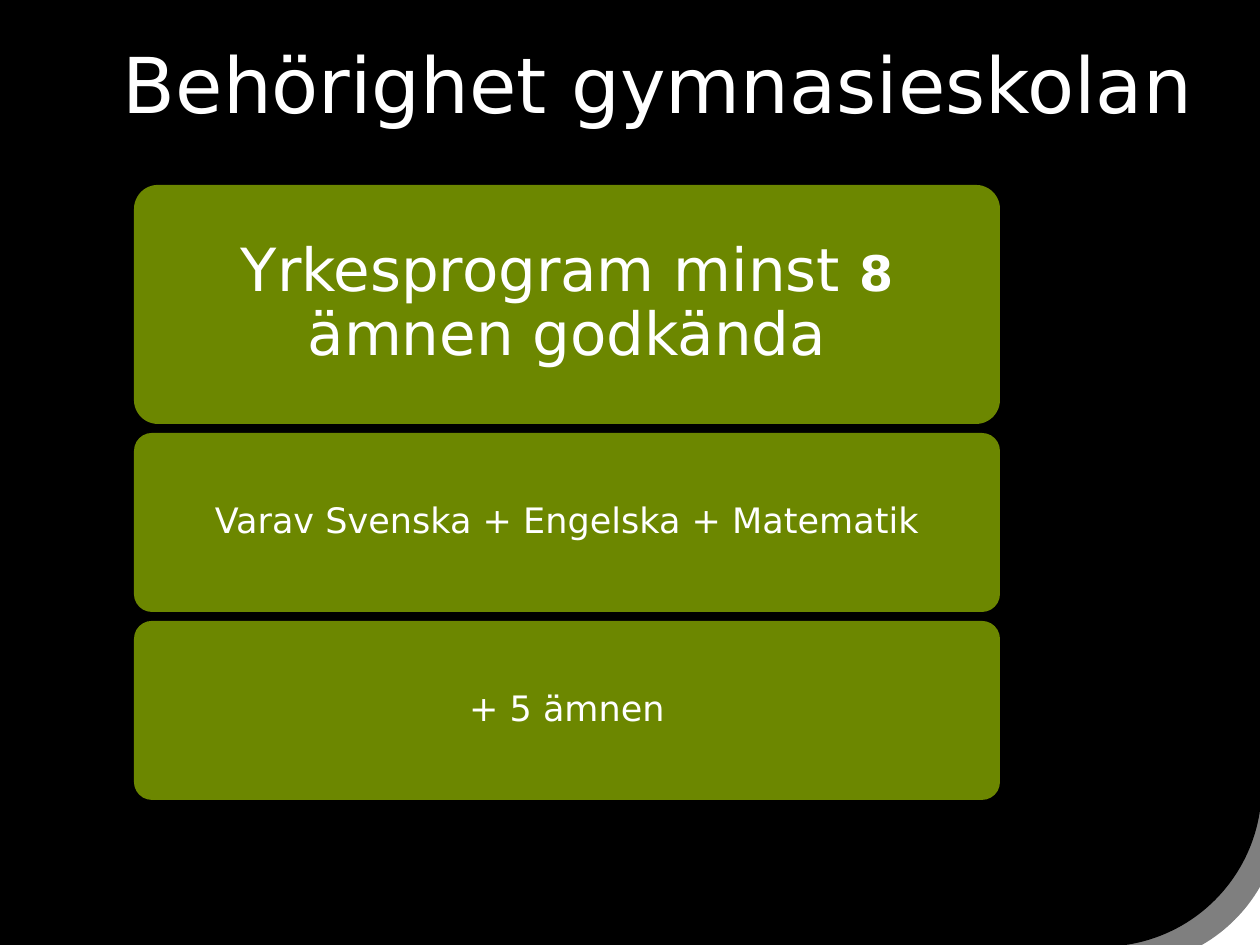
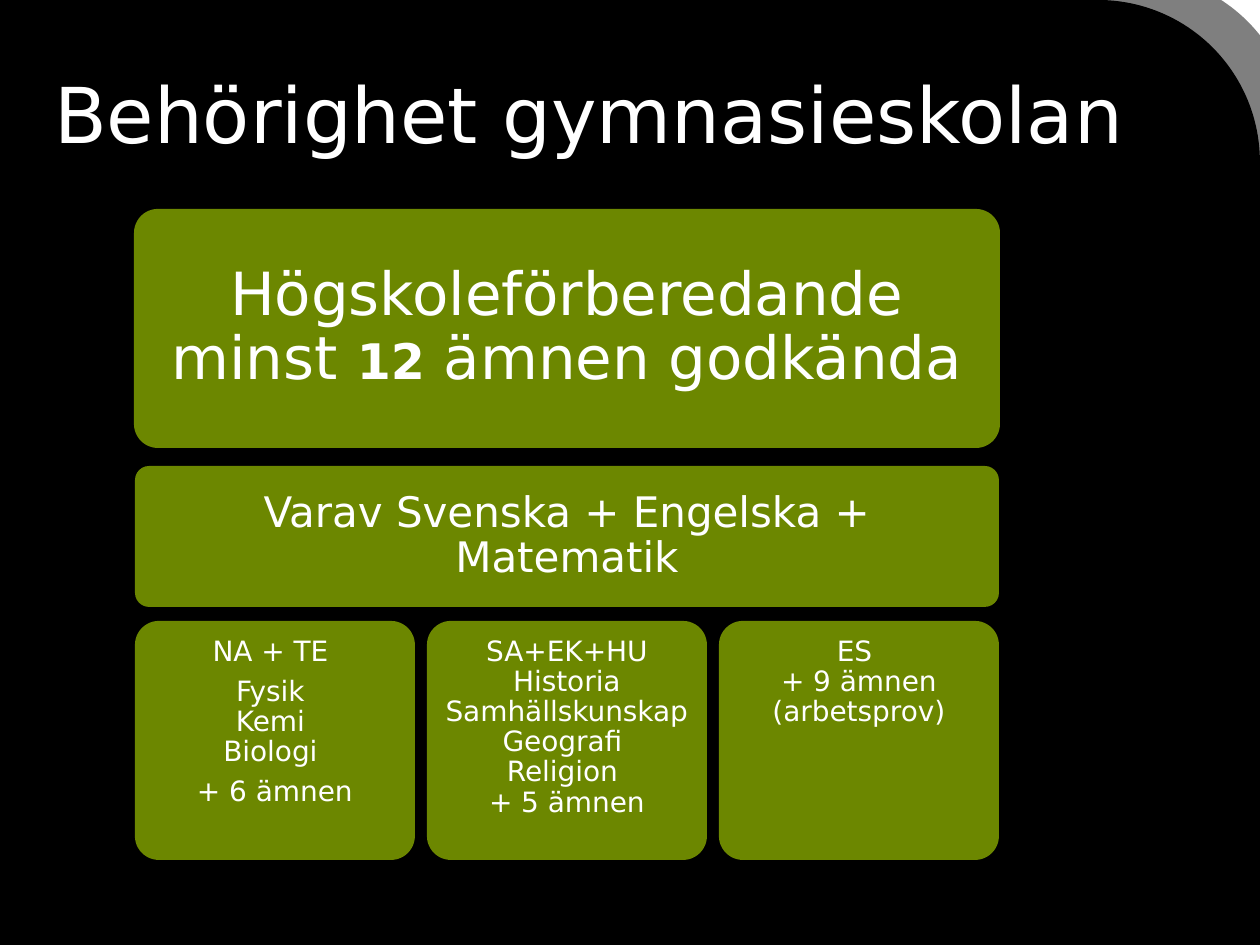
from lxml.etree import SubElement
from pptx import Presentation
from pptx.dml.color import RGBColor
from pptx.enum.shapes import MSO_SHAPE
from pptx.enum.text import MSO_ANCHOR, PP_ALIGN
from pptx.oxml.ns import qn
from pptx.util import Pt

SCALE = 914400 // 126
COLORS = {"page": "FFFFFF", "panel": "000000", "card": "B9E600", "text": "FFFFFF"}
FONT = "DejaVu Sans"
TITLE = "Behörighet gymnasieskolan"
SUBJECTS = "Varav Svenska + Engelska + Matematik"
CARD_LEFT, CARD_WIDTH, HEADING_HEIGHT = 134, 866, 239


def px(*lengths):
    """Turn whole pixels into EMU."""
    return [length * SCALE for length in lengths]


def write_text(frame, text, size, align=PP_ALIGN.LEFT, anchor=MSO_ANCHOR.TOP,
               inset=0, line_spacing=0.9, space_after=0.35, strong=None, strong_size=28):
    """Write paragraphs split by bars, with line breaks and one optional bold part."""
    frame.word_wrap = True
    frame.vertical_anchor = anchor
    frame.margin_left, frame.margin_top, frame.margin_right, frame.margin_bottom = px(*[inset] * 4)
    for index, content in enumerate(text.split("|")):
        paragraph = frame.add_paragraph() if index else frame.paragraphs[0]
        paragraph.alignment = align
        paragraph.line_spacing = line_spacing
        paragraph.space_after = Pt(round(space_after * size, 1))
        for part in content.partition(strong) if strong else [content]:
            for number, line in enumerate(part.split("\n")):
                if number:
                    paragraph.add_line_break()
                run = paragraph.add_run()
                run.text = line
                run.font.name = FONT
                run.font.bold = part == strong
                run.font.size = Pt(strong_size if part == strong else size)
                run.font.color.rgb = RGBColor.from_string(COLORS["text"])


class Deck:
    """Holds the presentation style and the current slide."""

    def __init__(self):
        self.presentation = Presentation()
        self.presentation.slide_width, self.presentation.slide_height = px(1260, 945)
        self.slide = None

    def new_slide(self):
        """Start a blank slide with the page colour."""
        self.slide = self.presentation.slides.add_slide(self.presentation.slide_layouts[6])
        fill = self.slide.background.fill
        fill.solid()
        fill.fore_color.rgb = RGBColor.from_string(COLORS["page"])

    def shape(self, kind, box, color, opacity=100):
        """Add a borderless shape with a plain fill."""
        shape = self.slide.shapes.add_shape(kind, *px(*box))
        shape.shadow.inherit = False
        shape.line.fill.background()
        shape.fill.solid()
        shape.fill.fore_color.rgb = RGBColor.from_string(COLORS[color])
        if opacity < 100:
            color_element = shape.element.spPr.find(qn("a:solidFill"))[0]
            SubElement(color_element, qn("a:alpha")).set("val", str(opacity * 1000))
        return shape

    def panel(self, box, opacity=100, flipped=False):
        """Add a black panel with one rounded corner."""
        shape = self.shape(MSO_SHAPE.ROUND_1_RECTANGLE, box, "panel", opacity)
        if flipped:
            shape.element.spPr.find(qn("a:xfrm")).set("flipV", "1")
        return shape

    def title(self, box):
        """Add the slide title."""
        title = self.slide.shapes.add_textbox(*px(*box))
        write_text(title.text_frame, TITLE, 44, line_spacing=Pt(36), space_after=0)

    def card(self, box, text, size, inset=18, anchor=MSO_ANCHOR.MIDDLE, strong=None):
        """Add a green rounded card with centred text."""
        shape = self.shape(MSO_SHAPE.ROUNDED_RECTANGLE, box, "card", 59)
        shape.adjustments[0] = 0.1
        write_text(shape.text_frame, text, size, align=PP_ALIGN.CENTER, anchor=anchor,
                   inset=inset, strong=strong)

    def heading_card(self, top, text, strong):
        """Add the tall card that states the number of subjects."""
        self.card((CARD_LEFT, top, CARD_WIDTH, HEADING_HEIGHT), text, 34, strong=strong)


def build_vocational(deck):
    """Build the slide about vocational programmes."""
    deck.new_slide()
    panel = deck.panel((0, 0, 1260, 945), flipped=True)
    panel.line.color.rgb = RGBColor.from_string(COLORS["panel"])
    panel.line.width = Pt(2)
    deck.panel((21, 21, 1260, 945), opacity=50, flipped=True)
    deck.title((123, 66, 1191, 89))
    deck.heading_card(185, "Yrkesprogram minst 8 ämnen godkända", "8")
    for row, text in enumerate([SUBJECTS, "+ 5 ämnen"]):
        deck.card((CARD_LEFT, 433 + 188 * row, CARD_WIDTH, 179), text, 20)


def build_preparatory(deck):
    """Build the slide about programmes that prepare for higher education."""
    deck.new_slide()
    deck.panel((0, -26, 1295, 971), opacity=50)
    deck.panel((-35, 0, 1295, 971))
    deck.title((54, 96, 1171, 89))
    deck.heading_card(209, "Högskoleförberedande minst 12 ämnen godkända", "12")
    deck.card((135, 466, 864, 141), SUBJECTS, 24, inset=13)
    programmes = [
        "NA + TE |Fysik \nKemi \nBiologi |+ 6 ämnen",
        "SA+EK+HU Historia Samhällskunskap Geografi \nReligion \n+ 5 ämnen",
        "ES \n+ 9 ämnen (arbetsprov)",
    ]
    for column, text in enumerate(programmes):
        deck.card((135 + 292 * column, 621, 280, HEADING_HEIGHT), text, 16, inset=9,
                  anchor=MSO_ANCHOR.TOP)


def main():
    """Build and save the presentation."""
    deck = Deck()
    build_vocational(deck)
    build_preparatory(deck)
    deck.presentation.save("out.pptx")


if __name__ == "__main__":
    main()
